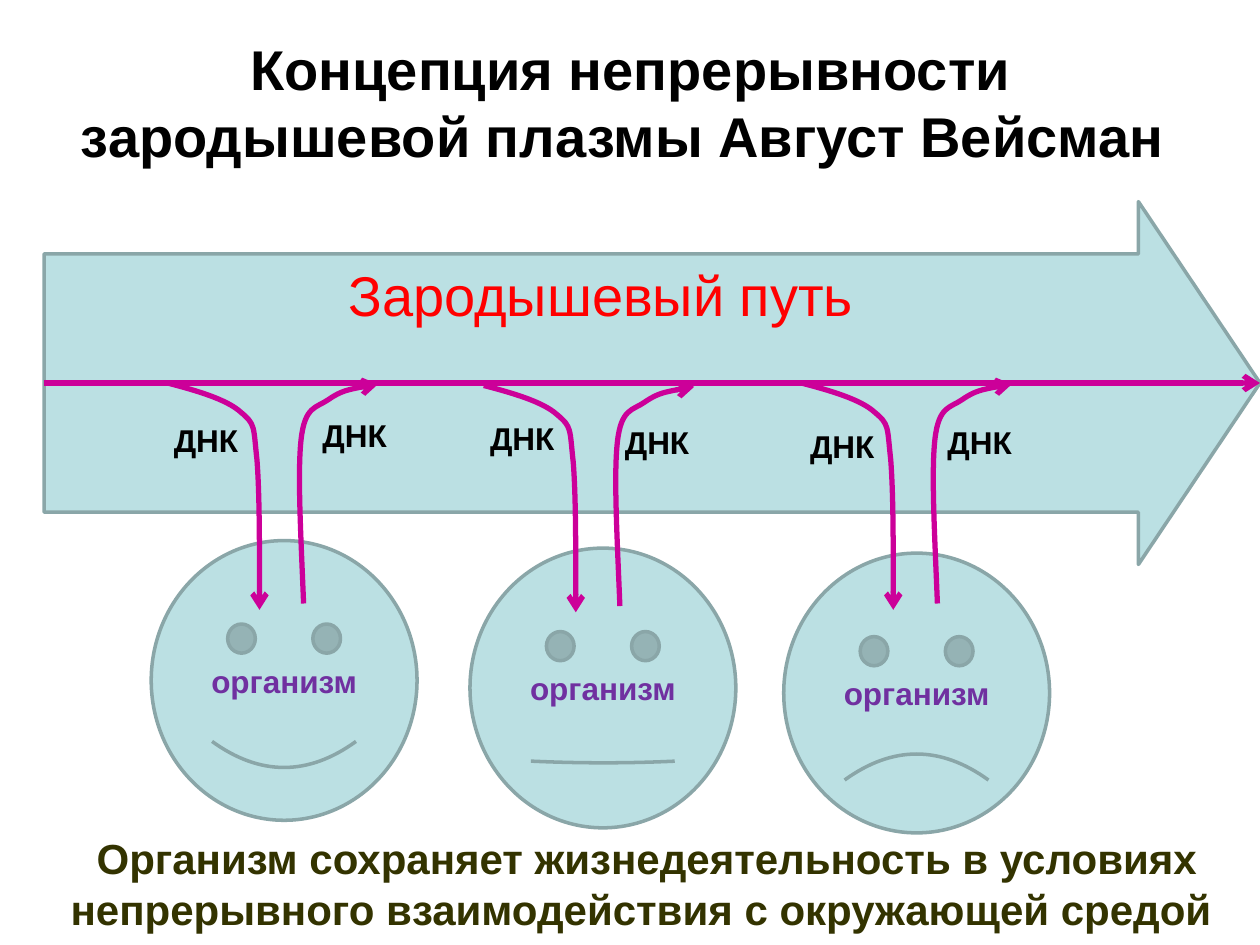
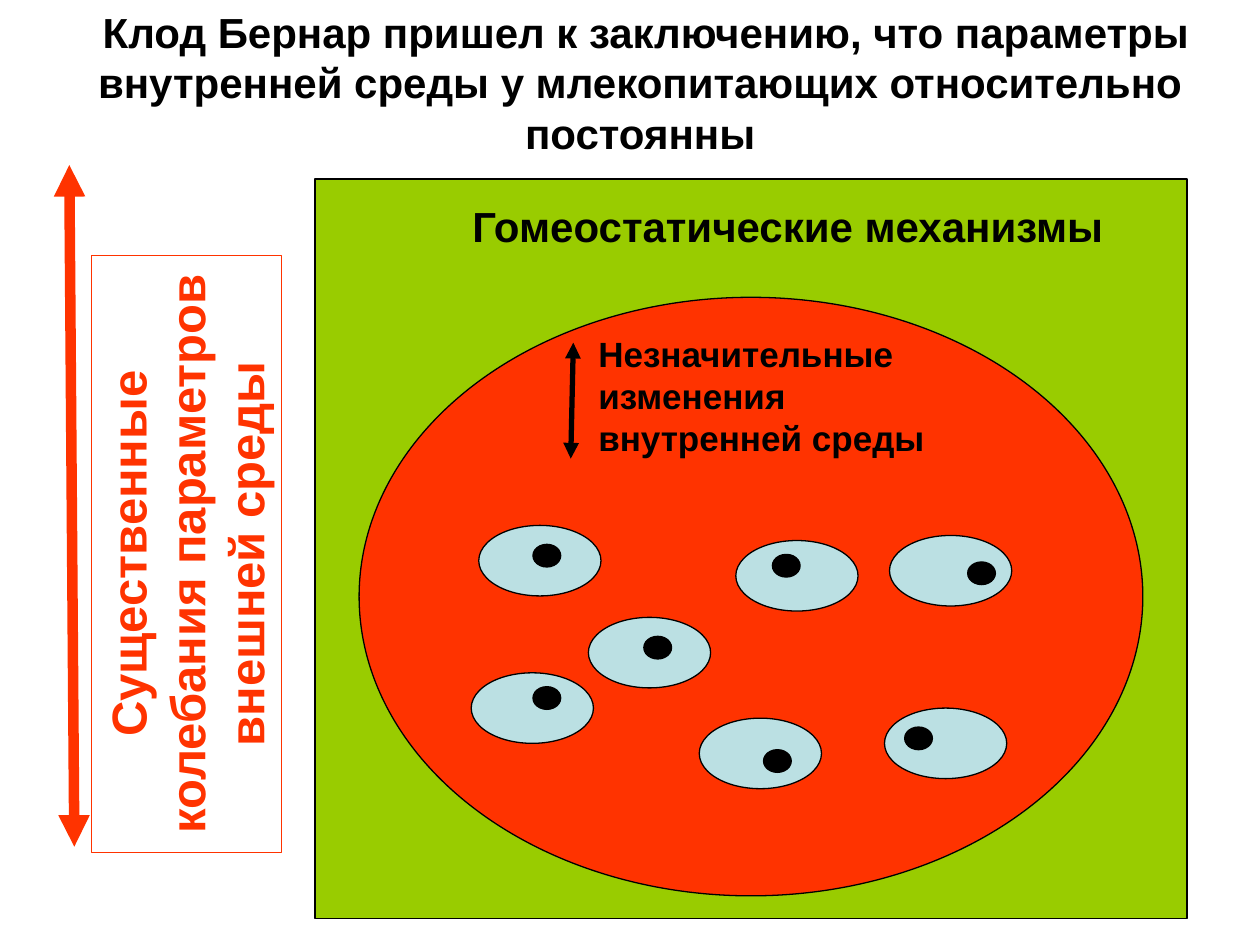
from lxml.etree import SubElement
from pptx import Presentation
from pptx.dml.color import RGBColor
from pptx.enum.shapes import MSO_CONNECTOR, MSO_SHAPE
from pptx.enum.text import MSO_ANCHOR, MSO_AUTO_SIZE, PP_ALIGN
from pptx.oxml.ns import qn
from pptx.util import Inches, Pt

FONT = "Arial"
HUE = {
    "ink": "000000", "pale": "BBE0E3", "edge": "8AA6A8", "plum": "CC0099",
    "red": "FF0000", "violet": "7030A0", "olive": "333300",
    "green": "99CC00", "flame": "FF3300",
}

PATH = {
    "title": "Концепция непрерывности зародышевой плазмы Август Вейсман ",
    "arrow": "Зародышевый путь ",
    "face": "организм",
    "label": "ДНК",
    "foot": "Организм сохраняет жизнедеятельность в условиях "
            "непрерывного взаимодействия с окружающей средой ",
}
FACES = [(1.2, 4.29, 0.047), (3.73, 4.35, 0.003), (6.22, 4.39, -0.047)]
LOOPS = [(1.33, 3.04), (3.84, 3.06), (6.36, 3.04)]
DOWN = [(0, 0), (0.23, 0.06), (0.47, 0.13), (0.58, 0.23), (0.7, 0.33),
        (0.68, 0.34), (0.71, 0.61), (0.73, 0.87), (0.73, 1.34), (0.73, 1.8)]
UP = [(1.08, 1.75), (1.06, 1.24), (1.03, 0.72), (1.06, 0.45), (1.09, 0.18),
      (1.18, 0.2), (1.28, 0.13), (1.38, 0.06), (1.53, 0.03), (1.67, 0.01)]
LABELS = [(1.05, 3.29), (2.23, 3.25), (3.56, 3.28),
          (4.63, 3.31), (6.1, 3.34), (7.19, 3.31)]

BODY = {
    "title": " Клод Бернар пришел к заключению, что параметры внутренней "
             "среды у млекопитающих относительно постоянны",
    "outer": "Существенные колебания параметров внешней среды",
    "frame": "Гомеостатические механизмы",
    "inner": "Незначительные изменения внутренней среды",
}
CELLS = [
    ((3.8, 4.17), (4.23, 4.32)), ((5.84, 4.29), (6.13, 4.4)),
    ((3.74, 5.34), (4.23, 5.45)), ((7.06, 4.25), (7.68, 4.46)),
    ((4.67, 4.9), (5.11, 5.05)), ((5.55, 5.7), (6.06, 5.95)),
    ((7.02, 5.62), (7.18, 5.77)),
]


def color(name):
    return RGBColor.from_string(HUE[name])


def write(shape, text, size, hue="ink", bold=True, align=PP_ALIGN.CENTER,
          anchor=MSO_ANCHOR.TOP, wrap=True):
    frame = shape.text_frame
    frame.text = text
    frame.word_wrap = wrap
    frame.auto_size = MSO_AUTO_SIZE.NONE
    frame.vertical_anchor = anchor
    para = frame.paragraphs[0]
    para.alignment = align
    font = para.font
    font.name, font.size, font.bold = FONT, Pt(size), bold
    font.color.rgb = color(hue)


def label(slide, text, box, size, **style):
    write(slide.shapes.add_textbox(*map(Inches, box)), text, size, **style)


def draw(slide, kind, box, fill, edge="ink", width=0.75):
    shape = slide.shapes.add_shape(kind, *map(Inches, box))
    shape.shadow.inherit = False
    if fill:
        shape.fill.solid()
        shape.fill.fore_color.rgb = color(fill)
    else:
        shape.fill.background()
    stroke(shape, edge, width)
    return shape


def stroke(shape, hue, width, **ends):
    shape.line.color.rgb = color(hue)
    shape.line.width = Pt(width)
    line = shape.line._get_or_add_ln()
    for end, kind in ends.items():
        SubElement(line, qn(f"a:{end}End"), type=kind)


def link(slide, start, stop, hue, width, **ends):
    line = slide.shapes.add_connector(
        MSO_CONNECTOR.STRAIGHT, *map(Inches, start + stop))
    stroke(line, hue, width, **ends)
    SubElement(line._element.spPr, qn("a:effectLst"))
    return line


def curve(slide, origin, points):
    spots = [(Inches(origin[0] + x), Inches(origin[1] + y)) for x, y in points]
    pen = slide.shapes.build_freeform(*spots[0])
    pen.add_line_segments(spots[1:], close=False)
    shape = pen.convert_to_shape()
    shape.shadow.inherit = False
    shape.fill.background()
    stroke(shape, "plum", 3, tail="arrow")
    track = next(shape._element.iter(qn("a:path")))
    steps = track.findall(qn("a:lnTo"))
    for i in range(0, len(steps), 3):
        bend = SubElement(track, qn("a:cubicBezTo"))
        for step in steps[i:i + 3]:
            bend.append(step[0])
            track.remove(step)


def start(deck, text, box, size, anchor):
    slide = deck.slides.add_slide(deck.slide_layouts[5])
    title = slide.shapes.title
    title.left, title.top, title.width, title.height = map(Inches, box)
    write(title, text, size, anchor=anchor)
    return slide


def plasm(deck):
    slide = start(deck, PATH["title"], (0.45, 0, 9.11, 1.61), 32,
                  MSO_ANCHOR.MIDDLE)
    for x, y, smile in FACES:
        face = draw(slide, MSO_SHAPE.SMILEY_FACE, (x, y, 2.11, 2.22),
                    "pale", "edge", 2)
        face.adjustments[0] = smile
        write(face, PATH["face"], 18, "violet", anchor=MSO_ANCHOR.MIDDLE)
    arrow = draw(slide, MSO_SHAPE.RIGHT_ARROW, (0.35, 1.6, 9.65, 2.88),
                 "pale", "edge", 2)
    arrow.adjustments[0], arrow.adjustments[1] = 0.712, 0.335
    write(arrow, PATH["arrow"], 32, "red", bold=False)
    line = link(slide, (0.35, 3.04), (10, 3.04), "plum", 3, tail="arrow")
    line.begin_connect(arrow, 1)
    line.end_connect(arrow, 3)
    for spot in LOOPS:
        curve(slide, spot, DOWN)
        curve(slide, spot, UP)
    label(slide, PATH["foot"], (0.27, 6.56, 9.73, 0.91), 24, hue="olive")
    for spot in LABELS:
        label(slide, PATH["label"], spot + (1.17, 0.4), 18)


def stasis(deck):
    slide = start(deck, BODY["title"], (0.42, 0, 9.32, 1.3), 24,
                  MSO_ANCHOR.TOP)
    draw(slide, MSO_SHAPE.RECTANGLE, (2.5, 1.42, 6.92, 5.87), "green")
    draw(slide, MSO_SHAPE.OVAL, (2.85, 2.36, 6.22, 4.75), "flame")
    both = {"head": "triangle", "tail": "triangle"}
    link(slide, (4.55, 2.72), (4.53, 3.64), "ink", 3, **both)
    label(slide, BODY["frame"], (3.65, 1.54, 5.25, 0.5), 24,
          align=PP_ALIGN.LEFT, wrap=False)
    label(slide, BODY["inner"], (4.65, 2.59, 3.23, 1.1), 20,
          align=PP_ALIGN.LEFT)
    for cell, core in CELLS:
        draw(slide, MSO_SHAPE.OVAL, cell + (0.97, 0.56), "pale")
        draw(slide, MSO_SHAPE.OVAL, core + (0.22, 0.18), "ink")
    link(slide, (0.55, 1.31), (0.59, 6.72), "flame", 6, **both)
    outer = draw(slide, MSO_SHAPE.RECTANGLE, (-0.89, 3.64, 4.74, 1.51),
                 None, "flame")
    outer.rotation = 270
    write(outer, BODY["outer"], 28, "flame")


def main():
    deck = Presentation()
    deck.slide_width, deck.slide_height = Inches(10), Inches(7.5)
    plasm(deck)
    stasis(deck)
    deck.save("out.pptx")


if __name__ == "__main__":
    main()
